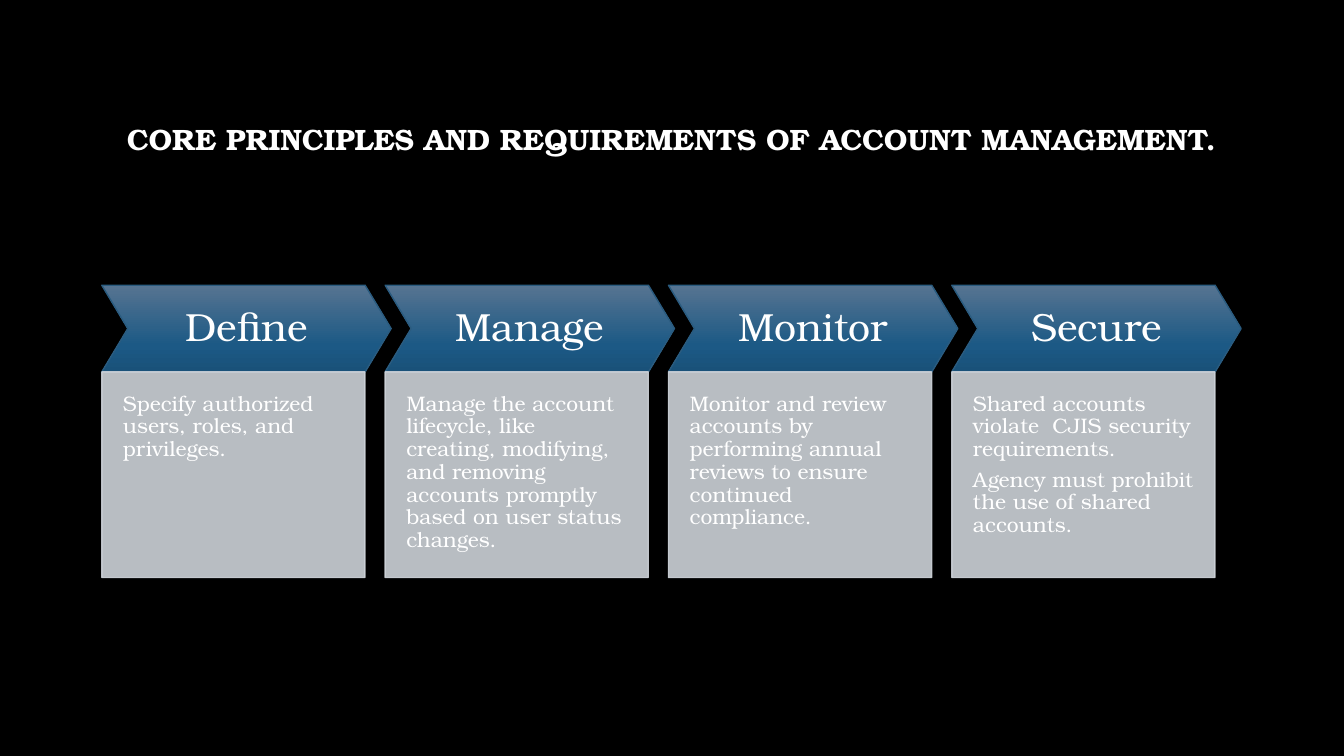
"""Build the account management principles slide."""
from copy import deepcopy
from dataclasses import dataclass

from lxml.etree import SubElement
from pptx import Presentation
from pptx.dml.color import RGBColor
from pptx.enum.shapes import MSO_SHAPE as Shape
from pptx.enum.text import MSO_ANCHOR as Anchor, PP_ALIGN as Align
from pptx.oxml.ns import qn
from pptx.shapes.autoshape import Shape as AutoShape
from pptx.slide import Slide
from pptx.util import Inches, Pt

BLACK = RGBColor(0x00, 0x00, 0x00)
WHITE = RGBColor(0xFF, 0xFF, 0xFF)
GRAY = RGBColor(0xCD, 0xD2, 0xD8)
OUTLINE = RGBColor(0x2A, 0x5B, 0x7F)
CHEVRON_STOPS = [
    (0, RGBColor(0x56, 0x74, 0x91)),
    (0.69, RGBColor(0x1C, 0x59, 0x85)),
    (1, RGBColor(0x19, 0x51, 0x79)),
]
FONT = "TeX Gyre Bonum"

LEFT, PITCH = 1.01, 2.81
CHEVRON_TOP, CHEVRON_WIDTH, CHEVRON_HEIGHT = 2.83, 2.87, 0.86
BOX_WIDTH, BOX_HEIGHT = 2.61, 2.04


@dataclass
class Principle:
    heading: str
    details: list[str]


@dataclass
class TextStyle:
    font: dict
    paragraph: dict
    frame: dict


PRINCIPLES = [
    Principle("Define", ["Specify authorized users, roles, and privileges."]),
    Principle("Manage", [
        "Manage the account lifecycle, like creating, modifying, and removing "
        "accounts promptly based on user status changes."]),
    Principle("Monitor", [
        "Monitor and review accounts by performing annual reviews to ensure "
        "continued compliance."]),
    Principle("Secure", [
        "Shared accounts violate  CJIS security requirements.",
        "Agency must prohibit the use of shared accounts."]),
]


def margins(side: float, bottom: float) -> dict:
    """Return text frame margins with a separate bottom value."""
    sides = {f"margin_{name}": Inches(side) for name in ("left", "top", "right")}
    return {**sides, "margin_bottom": Inches(bottom)}


TITLE_STYLE = TextStyle(
    {"size": Pt(21), "bold": True},
    {"alignment": Align.CENTER},
    {"vertical_anchor": Anchor.MIDDLE})
HEADING_STYLE = TextStyle(
    {"size": Pt(28)},
    {"alignment": Align.CENTER},
    {"vertical_anchor": Anchor.MIDDLE, **margins(0.11, 0.11)})
DETAIL_STYLE = TextStyle(
    {"size": Pt(15)},
    {"alignment": Align.LEFT, "space_after": Pt(5.5)},
    {"vertical_anchor": Anchor.TOP, **margins(0.21, 0.41)})


def set_values(target: object, values: dict) -> None:
    """Set every attribute listed in a dict of format values."""
    for name, value in values.items():
        setattr(target, name, value)


def write_text(shape: AutoShape, lines: list[str], style: TextStyle) -> None:
    """Write paragraphs into a shape in one style."""
    frame = shape.text_frame
    set_values(frame, {"word_wrap": True, **style.frame})
    frame.text = "\n".join(lines)
    for paragraph in frame.paragraphs:
        set_values(paragraph, {"line_spacing": 0.9, **style.paragraph})
        set_values(paragraph.font, {"name": FONT, **style.font})
        paragraph.font.color.rgb = WHITE


def add_panel(slide: Slide, kind: Shape, left: float, top: float,
              width: float, height: float, outline: RGBColor) -> AutoShape:
    """Add an outlined shape without a shadow."""
    shape = slide.shapes.add_shape(
        kind, Inches(left), Inches(top), Inches(width), Inches(height))
    shape.shadow.inherit = False
    shape.line.color.rgb = outline
    shape.line.width = Pt(1)
    return shape


def fill_gradient(shape: AutoShape) -> None:
    """Fill a shape with the vertical chevron gradient."""
    shape.fill.gradient()
    shape.fill.gradient_angle = 270
    stop_list = shape.element.spPr.find(".//" + qn("a:gsLst"))
    stop_list.append(deepcopy(stop_list[-1]))
    for stop, (position, color) in zip(shape.fill.gradient_stops, CHEVRON_STOPS):
        stop.position = position
        stop.color.rgb = color


def add_principle(slide: Slide, principle: Principle, left: float) -> None:
    """Add a chevron heading with its detail box below."""
    chevron = add_panel(slide, Shape.CHEVRON, left, CHEVRON_TOP,
                        CHEVRON_WIDTH, CHEVRON_HEIGHT, OUTLINE)
    chevron.adjustments[0] = 0.3
    fill_gradient(chevron)
    write_text(chevron, [principle.heading], HEADING_STYLE)

    box = add_panel(slide, Shape.RECTANGLE, left, CHEVRON_TOP + CHEVRON_HEIGHT,
                    BOX_WIDTH, BOX_HEIGHT, GRAY)
    box.fill.solid()
    box.fill.fore_color.rgb = GRAY
    for color in box.element.spPr.iter(qn("a:srgbClr")):
        SubElement(color, qn("a:alpha"), val="90000")
    write_text(box, principle.details, DETAIL_STYLE)


def main() -> None:
    """Create and save the presentation."""
    presentation = Presentation()
    presentation.slide_width = Inches(13.33)
    presentation.slide_height = Inches(7.5)
    slide = presentation.slides.add_slide(presentation.slide_layouts[6])
    slide.background.fill.solid()
    slide.background.fill.fore_color.rgb = BLACK

    title = slide.shapes.add_textbox(
        Inches(1), Inches(0.67), Inches(11.32), Inches(1.45))
    write_text(title, ["CORE PRINCIPLES AND REQUIREMENTS OF ACCOUNT MANAGEMENT."],
               TITLE_STYLE)
    for index, principle in enumerate(PRINCIPLES):
        add_principle(slide, principle, LEFT + index * PITCH)
    presentation.save("out.pptx")


if __name__ == "__main__":
    main()
